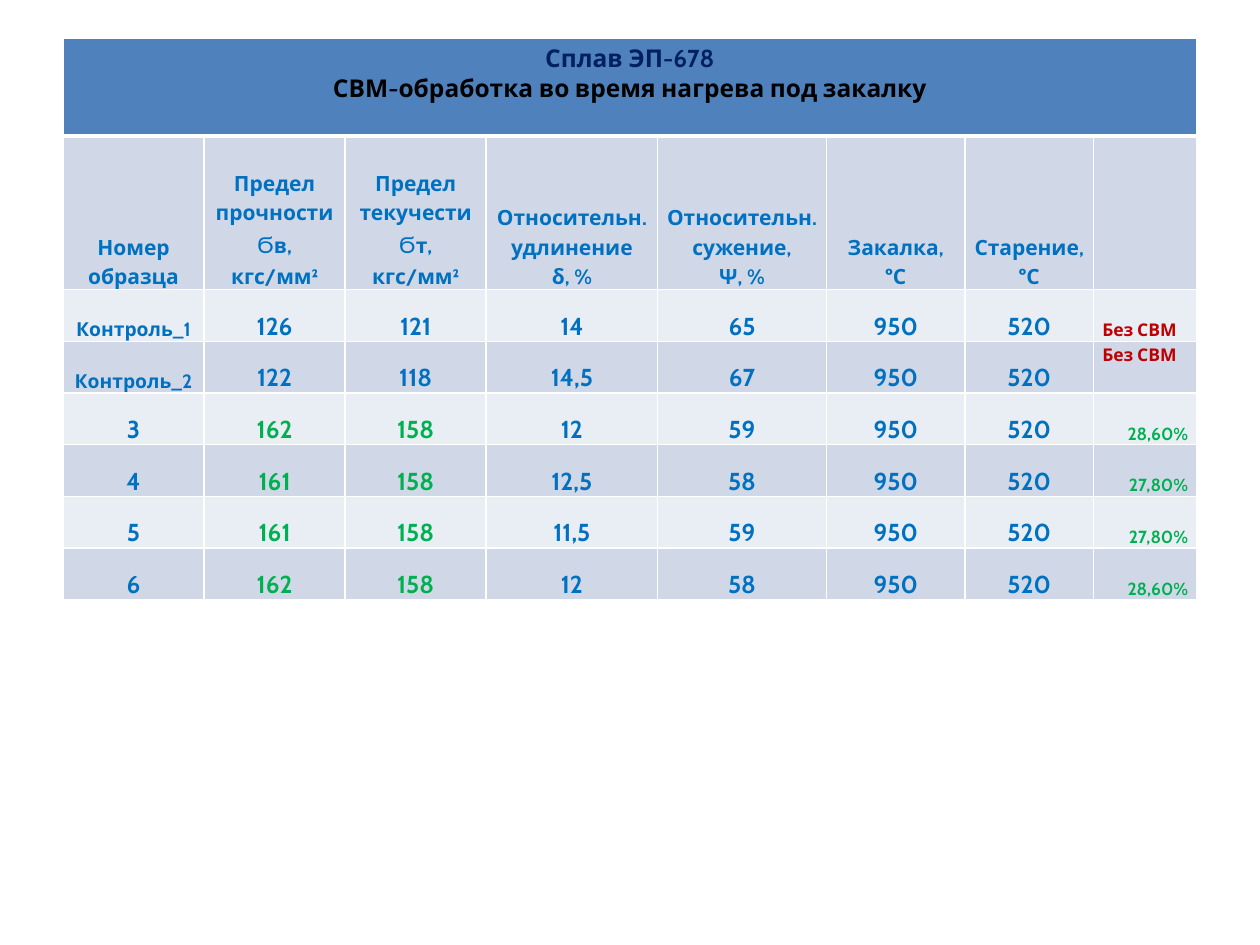
"""Build the slide with the mechanical test results of the ЭП-678 alloy."""
from pptx import Presentation
from pptx.dml.color import RGBColor
from pptx.enum.text import MSO_ANCHOR, PP_ALIGN
from pptx.oxml import parse_xml
from pptx.oxml.ns import nsdecls
from pptx.util import Inches, Pt

BLUE, GREEN, RED = "0070C0", "00B050", "C00000"
COLUMN_WIDTHS = [1.12, 1.12, 1.12, 1.36, 1.34, 1.1, 1.02, 0.82]
ROW_HEIGHTS = [0.78, 1.22] + [0.41] * 6
TITLE = [("Сплав ЭП-678", "002060"),
         ("СВМ-обработка во время нагрева под закалку", "000000")]
HEADINGS = ["Номер образца", "Предел прочности\vϬв, кгс/мм²",
            "Предел текучести\vϬт, кгс/мм²", "Относительн. удлинение\vδ, %",
            "Относительн. сужение,\vΨ, %", "Закалка, ºС", "Старение, ºС", ""]
SAMPLES = [
    ["Контроль_1", "126", "121", "14", "65", "950", "520", "Без СВМ\u00a0"],
    ["Контроль_2", "122", "118", "14,5", "67", "950", "520", "Без СВМ\u00a0"],
    ["3", "162", "158", "12", "59", "950", "520", "28,60%"],
    ["4", "161", "158", "12,5", "58", "950", "520", "27,80%"],
    ["5", "161", "158", "11,5", "59", "950", "520", "27,80%"],
    ["6", "162", "158", "12", "58", "950", "520", "28,60%"],
]


def format_run(run, size, color, font="Cabin", bold=True):
    run.font.name, run.font.size, run.font.bold = font, Pt(size), bold
    run.font.color.rgb = RGBColor.from_string(color)


def style_cell(cell, fill, top=1, bottom=1):
    for side, width in (("L", 1), ("R", 1), ("T", top), ("B", bottom)):
        cell._tc.get_or_add_tcPr().append(parse_xml(
            f'<a:ln{side} {nsdecls("a")} w="{Pt(width)}"><a:solidFill>'
            f'<a:srgbClr val="FFFFFF"/></a:solidFill></a:ln{side}>'))
    cell.fill.solid()
    cell.fill.fore_color.rgb = RGBColor.from_string(fill)


presentation = Presentation()
presentation.slide_width, presentation.slide_height = Inches(10), Inches(7.5)
slide = presentation.slides.add_slide(presentation.slide_layouts[6])
results = slide.shapes.add_table(
    len(ROW_HEIGHTS), len(COLUMN_WIDTHS), Inches(0.5), Inches(0.3),
    Inches(9), Inches(4.45)).table
for column, width in zip(results.columns, COLUMN_WIDTHS):
    column.width = Inches(width)
for row, height in zip(results.rows, ROW_HEIGHTS):
    row.height = Inches(height)

for cell in results.rows[0].cells:
    style_cell(cell, "4F81BD", bottom=3)
alloy = results.cell(0, 0)
alloy.merge(results.cell(0, len(COLUMN_WIDTHS) - 1))
alloy.text_frame.text = "\n".join(text for text, color in TITLE)
for paragraph, (text, color) in zip(alloy.text_frame.paragraphs, TITLE):
    paragraph.alignment = PP_ALIGN.CENTER
    format_run(paragraph.runs[0], 14, color)

for r, values in enumerate([HEADINGS] + SAMPLES, start=1):
    for c, value in enumerate(values):
        cell = results.cell(r, c)
        style_cell(cell, "D0D8E8" if r % 2 else "E9EDF4", top=3 if r == 1 else 1)
        cell.vertical_anchor = MSO_ANCHOR.BOTTOM
        cell.margin_left = cell.margin_right = Inches(0.07)
        cell.margin_top = cell.margin_bottom = 0
        paragraph = cell.text_frame.paragraphs[0]
        paragraph.alignment = PP_ALIGN.CENTER
        paragraph.line_spacing = 1.15
        size, color = 14, BLUE
        if r == 1:
            size = 12
        elif c == 7:
            size = 10
            is_control = value.startswith("Без")
            color = RED if is_control else GREEN
            paragraph.alignment = PP_ALIGN.LEFT if is_control else PP_ALIGN.RIGHT
        elif value.startswith("Контроль"):
            size = 11
        elif r > 3 and c in (1, 2):
            color = GREEN
        before, sigma, after = value.partition("Ϭ")
        paragraph.text = before
        for run in paragraph.runs:
            format_run(run, size, color)
        if sigma:
            for text, look in ((sigma, (14, color, "Calibri", False)),
                               (after, (size, color))):
                run = paragraph.add_run()
                run.text = text
                format_run(run, *look)

results.cell(3, 7).vertical_anchor = MSO_ANCHOR.TOP
presentation.save("out.pptx")
